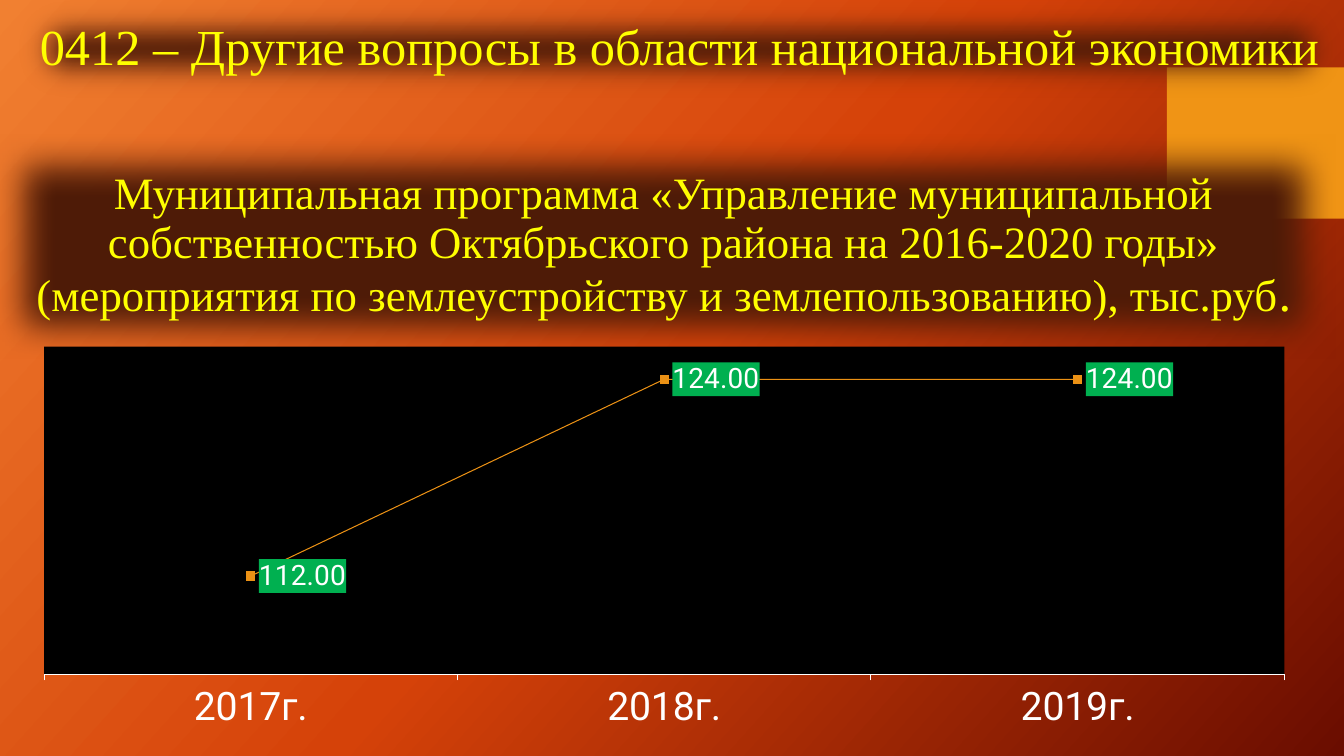
from copy import deepcopy
from dataclasses import dataclass

from lxml.etree import SubElement
from pptx import Presentation
from pptx.chart.chart import Chart
from pptx.chart.data import CategoryChartData
from pptx.dml.color import RGBColor
from pptx.dml.fill import FillFormat
from pptx.enum.chart import XL_CHART_TYPE as ChartType
from pptx.enum.chart import XL_LABEL_POSITION as LabelPosition
from pptx.enum.chart import XL_MARKER_STYLE as MarkerStyle
from pptx.enum.chart import XL_TICK_LABEL_POSITION as TickLabelPosition
from pptx.enum.chart import XL_TICK_MARK as TickMark
from pptx.enum.shapes import MSO_SHAPE as ShapeType
from pptx.enum.text import MSO_ANCHOR as Anchor
from pptx.enum.text import MSO_AUTO_SIZE as AutoSize
from pptx.enum.text import PP_ALIGN as Align
from pptx.oxml import parse_xml
from pptx.oxml.ns import nsdecls, qn
from pptx.oxml.xmlchemy import BaseOxmlElement
from pptx.shapes.autoshape import Shape
from pptx.slide import Slide
from pptx.text.text import Font
from pptx.util import Cm, Pt

SOFT_EDGE = Cm(0.88)
YELLOW, WHITE, ORANGE, BROWN = "FFFF00", "FFFFFF", "EB9115", "4E1B07"


@dataclass
class Box:
    left: float
    top: float
    width: float
    height: float

    def lengths(self) -> list[Cm]:
        return [Cm(value) for value in (self.left, self.top, self.width, self.height)]


@dataclass
class Run:
    text: str
    size: int


@dataclass
class Banner:
    box: Box
    runs: list[Run]


HEADING = Banner(Box(-0.2, 3.4, 33.86, 5.64), [
    Run("Муниципальная программа «Управление муниципальной собственностью "
        "Октябрьского района на 2016-2020 годы» (мероприятия по землеустройству "
        "и землепользованию), тыс.руб", 32),
    Run(".", 36),
])
SECTION = Banner(Box(0.2, -0.25, 33.86, 2.97), [
    Run("0412 – Другие вопросы в области национальной экономики", 36),
])
ACCENT = Box(29.41, 1.7, 4.46, 3.81)
CHART = Box(0.46, 8.53, 32.56, 10.08)
PLOT = {"x": 0.02, "y": 0.02, "w": 0.96, "h": 0.82}
VALUES = {"2017г.": 112, "2018г.": 124, "2019г.": 124}


def apply(target: object, values: dict) -> None:
    for name, value in values.items():
        setattr(target, name, value)


def color(code: str) -> RGBColor:
    return RGBColor.from_string(code)


def paint(fill: FillFormat, code: str) -> None:
    fill.solid()
    fill.fore_color.rgb = color(code)


def format_font(font: Font, size: int, name: str, code: str) -> None:
    apply(font, {"size": Pt(size), "name": name})
    font.color.rgb = color(code)


def paint_background(slide: Slide) -> None:
    fill = slide.background.fill
    fill.gradient()
    fill.gradient_angle = 318
    last_stop = slide.element.findall(".//" + qn("a:gs"))[-1]
    last_stop.addprevious(deepcopy(last_stop))
    stops = zip(fill.gradient_stops, (0, 0.5, 1), ("F18031", "D54209", "6A0D00"))
    for stop, position, code in stops:
        stop.position = position
        stop.color.rgb = color(code)


def add_rectangle(slide: Slide, box: Box) -> Shape:
    shape = slide.shapes.add_shape(ShapeType.RECTANGLE, *box.lengths())
    shape.shadow.inherit = False
    shape.line.fill.background()
    return shape


def fill_banner(shape: Shape, banner: Banner) -> None:
    paint(shape.fill, BROWN)
    shape.shadow.inherit = False
    effects = shape.element.spPr.find(qn("a:effectLst"))
    SubElement(effects, qn("a:softEdge"), rad=str(int(SOFT_EDGE)))
    apply(shape.text_frame, {"word_wrap": True, "auto_size": AutoSize.NONE,
                             "vertical_anchor": Anchor.MIDDLE})
    paragraph = shape.text_frame.paragraphs[0]
    apply(paragraph, {"alignment": Align.CENTER, "line_spacing": 0.9})
    for part in banner.runs:
        run = paragraph.add_run()
        run.text = part.text
        format_font(run.font, part.size, "Times New Roman", YELLOW)


def solid_properties(code: str) -> BaseOxmlElement:
    return parse_xml(f'<c:spPr {nsdecls("c", "a")}><a:solidFill>'
                     f'<a:srgbClr val="{code}"/></a:solidFill></c:spPr>')


def format_plot_area(chart: Chart) -> None:
    plot_area = chart.element.find(".//" + qn("c:plotArea"))
    layout = plot_area.find(qn("c:layout"))
    if layout is None:
        layout = SubElement(plot_area, qn("c:layout"))
        plot_area.insert(0, layout)
    manual = SubElement(layout, qn("c:manualLayout"))
    SubElement(manual, qn("c:layoutTarget"), val="inner")
    for mode in ("xMode", "yMode"):
        SubElement(manual, qn("c:" + mode), val="edge")
    for side, share in PLOT.items():
        SubElement(manual, qn("c:" + side), val=str(share))
    plot_area.append(solid_properties("000000"))


def format_series(chart: Chart) -> None:
    series = chart.plots[0].series[0]
    series.smooth = False
    series.format.line.width = Pt(0.75)
    apply(series.marker, {"style": MarkerStyle.SQUARE, "size": 6})
    for line in (series.format.line, series.marker.format.line):
        paint(line.fill, ORANGE)
    paint(series.marker.format.fill, ORANGE)
    labels = series.data_labels
    apply(labels, {"show_value": True, "number_format": "0.00",
                   "number_format_is_linked": False,
                   "position": LabelPosition.RIGHT})
    format_font(labels.font, 20, "Roboto", WHITE)
    label_text = chart.element.find(f".//{qn('c:ser')}/{qn('c:dLbls')}/{qn('c:txPr')}")
    label_text.addprevious(solid_properties("00B050"))


def add_line_chart(slide: Slide) -> None:
    data = CategoryChartData(number_format="0.00")
    data.categories = list(VALUES)
    data.add_series("Series 1", list(VALUES.values()))
    chart = slide.shapes.add_chart(ChartType.LINE_MARKERS, *CHART.lengths(), data).chart
    apply(chart, {"has_legend": False, "has_title": False})
    format_font(chart.font, 10, "Roboto", WHITE)
    chart.plots[0].vary_by_categories = False
    apply(chart.value_axis, {"visible": False, "has_major_gridlines": False,
                             "minimum_scale": 106, "maximum_scale": 126})
    years = chart.category_axis
    apply(years, {"major_tick_mark": TickMark.OUTSIDE,
                  "tick_label_position": TickLabelPosition.LOW})
    format_font(years.tick_labels.font, 28, "Roboto", WHITE)
    paint(years.format.line.fill, WHITE)
    years.format.line.width = Pt(0.75)
    format_plot_area(chart)
    format_series(chart)


def main() -> None:
    presentation = Presentation()
    apply(presentation, {"slide_width": Cm(33.87), "slide_height": Cm(19.05)})
    slide = presentation.slides.add_slide(presentation.slide_layouts[5])
    paint_background(slide)
    title = slide.shapes.title
    apply(title, dict(zip(("left", "top", "width", "height"), HEADING.box.lengths())))
    fill_banner(title, HEADING)
    accent = add_rectangle(slide, ACCENT)
    paint(accent.fill, "F09415")
    title.element.addprevious(accent.element)
    add_line_chart(slide)
    fill_banner(add_rectangle(slide, SECTION.box), SECTION)
    presentation.save("out.pptx")


if __name__ == "__main__":
    main()
